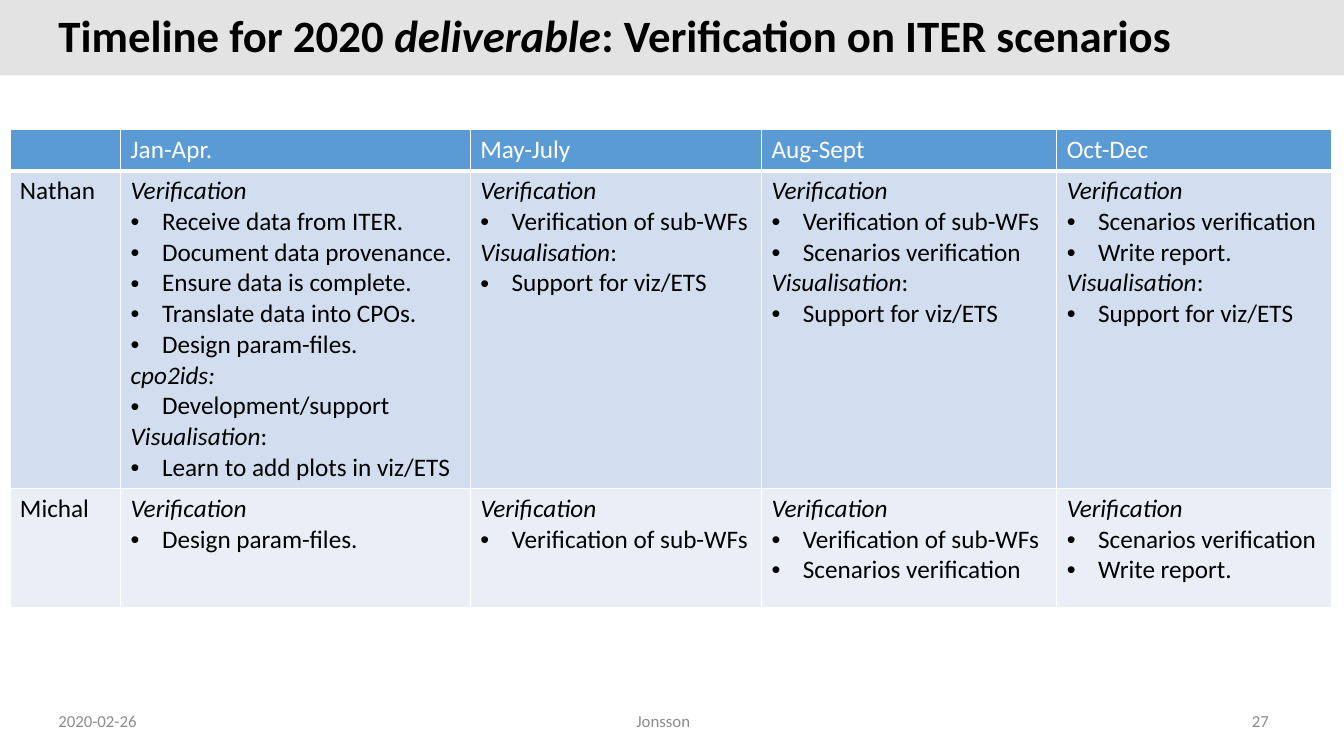
import pptx
import pptx.util
import pptx.dml.color
import pptx.enum.shapes
import pptx.enum.text
import pptx.oxml
from lxml import etree

Cm = pptx.util.Cm
Pt = pptx.util.Pt
RGBColor = pptx.dml.color.RGBColor
ALIGN = pptx.enum.text.PP_ALIGN
MIDDLE = pptx.enum.text.MSO_ANCHOR.MIDDLE

BLACK = RGBColor(0x00, 0x00, 0x00)
WHITE = RGBColor(0xFF, 0xFF, 0xFF)
GREY = RGBColor(0x8C, 0x8C, 0x8C)
BAND = RGBColor(0xE3, 0xE3, 0xE3)
HEADER = RGBColor(0x5B, 0x9B, 0xD5)
ROW_FILLS = [RGBColor(0xD2, 0xDE, 0xEF), RGBColor(0xEA, 0xEF, 0xF7)]
A = "http://schemas.openxmlformats.org/drawingml/2006/main"

SUB_WFS = "Verification of sub-WFs"
SCENARIOS = "Scenarios verification"
PARAM_FILES = "Design param-files."
REPORT = "Write report."
VIZ = ("Visualisation", ":", ["Support for viz/ETS"])


def verification(*tasks):
    """Return a verification section with its tasks."""
    return ("Verification", "", tasks)


PERIODS = ["Jan-Apr.", "May-July", "Aug-Sept", "Oct-Dec"]
PLAN = {
    "Nathan": [
        [verification("Receive data from ITER.", "Document data provenance.",
                      "Ensure data is complete.", "Translate data into CPOs.",
                      PARAM_FILES),
         ("cpo2ids:", "", ["Development/support"]),
         ("Visualisation", ":", ["Learn to add plots in viz/ETS"])],
        [verification(SUB_WFS), VIZ],
        [verification(SUB_WFS, SCENARIOS), VIZ],
        [verification(SCENARIOS, REPORT), VIZ],
    ],
    "Michal": [
        [verification(PARAM_FILES)],
        [verification(SUB_WFS)],
        [verification(SUB_WFS, SCENARIOS)],
        [verification(SCENARIOS, REPORT)],
    ],
}


class SlideBuilder:
    """Holds the text style and the current slide."""

    font = "Calibri"
    body_size = 18

    def __init__(self, prs):
        """Add a title-only slide."""
        self.slide = prs.slides.add_slide(prs.slide_layouts[5])

    def run(self, p, text, size, color, bold=False, italic=False):
        """Add one formatted run to a paragraph."""
        r = p.add_run()
        r.text = text
        r.font.name = self.font
        r.font.size = Pt(size)
        r.font.bold = bold
        r.font.italic = italic
        r.font.color.rgb = color

    def band(self, width, height, color):
        """Add a plain band along the top, behind everything else."""
        sp = self.slide.shapes.add_shape(
            pptx.enum.shapes.MSO_SHAPE.RECTANGLE, 0, 0, width, height)
        sp.shadow.inherit = False
        sp.fill.solid()
        sp.fill.fore_color.rgb = color
        sp.line.fill.background()
        self.slide.shapes._spTree.insert(2, sp._element)

    def title(self, runs, left, top, width, height):
        """Place the title and fill it with (text, italic) runs."""
        sp = self.slide.shapes.title
        sp.left, sp.top, sp.width, sp.height = left, top, width, height
        tf = sp.text_frame
        tf.auto_size = pptx.enum.text.MSO_AUTO_SIZE.NONE
        tf.vertical_anchor = MIDDLE
        p = tf.paragraphs[0]
        p.alignment = ALIGN.LEFT
        p.line_spacing = 0.9
        for text, italic in runs:
            self.run(p, text, 32, BLACK, bold=True, italic=italic)

    def footer(self, text, left, width, align):
        """Add one footer text."""
        sp = self.slide.shapes.add_textbox(left, Cm(17.65), width, Cm(1.02))
        tf = sp.text_frame
        tf.word_wrap = True
        tf.vertical_anchor = MIDDLE
        p = tf.paragraphs[0]
        p.alignment = align
        self.run(p, text, 12, GREY)

    def cell_style(self, cell, fill, bottom=1):
        """Give a cell white borders and a solid fill."""
        tcPr = cell._tc.get_or_add_tcPr()
        for side, width in (("L", 1), ("R", 1), ("T", 1), ("B", bottom)):
            tcPr.append(pptx.oxml.parse_xml(
                f'<a:ln{side} xmlns:a="{A}" w="{Pt(width)}"><a:solidFill>'
                f'<a:srgbClr val="{WHITE}"/></a:solidFill></a:ln{side}>'))
        cell.fill.solid()
        cell.fill.fore_color.rgb = fill

    def bullet(self, p):
        """Turn a paragraph into a bulleted one."""
        pPr = p._p.get_or_add_pPr()
        pPr.set("marL", str(Cm(0.79)))
        pPr.set("indent", str(-Cm(0.79)))
        font = etree.SubElement(pPr, f"{{{A}}}buFont")
        font.set("typeface", "Arial")
        etree.SubElement(pPr, f"{{{A}}}buChar").set("char", "•")

    def sections(self, cell, sections):
        """Fill a cell with italic headings and bulleted tasks."""
        tf = cell.text_frame
        for i, (heading, suffix, tasks) in enumerate(sections):
            p = tf.add_paragraph() if i else tf.paragraphs[0]
            self.run(p, heading, self.body_size, BLACK, italic=True)
            if suffix:
                self.run(p, suffix, self.body_size, BLACK)
            for task in tasks:
                p = tf.add_paragraph()
                self.bullet(p)
                self.run(p, task, self.body_size, BLACK)

    def timeline(self, left, top, col_widths, row_heights):
        """Add the table of people against periods."""
        table = self.slide.shapes.add_table(
            len(row_heights), len(col_widths), left, top,
            sum(col_widths), sum(row_heights)).table
        table.horz_banding = False
        for column, width in zip(table.columns, col_widths):
            column.width = width
        for row, height in zip(table.rows, row_heights):
            row.height = height
        for col, period in enumerate([""] + PERIODS):
            cell = table.cell(0, col)
            self.cell_style(cell, HEADER, bottom=3)
            if period:
                self.run(cell.text_frame.paragraphs[0], period,
                         self.body_size, WHITE)
        for row, (person, periods) in enumerate(PLAN.items(), 1):
            for cell in table.rows[row].cells:
                self.cell_style(cell, ROW_FILLS[row - 1])
            self.run(table.cell(row, 0).text_frame.paragraphs[0], person,
                     self.body_size, BLACK)
            for col, sections in enumerate(periods, 1):
                self.sections(table.cell(row, col), sections)


def main():
    """Build and save the timeline slide."""
    prs = pptx.Presentation()
    prs.slide_width, prs.slide_height = Cm(33.87), Cm(19.05)
    s = SlideBuilder(prs)
    s.band(prs.slide_width, Cm(1.9), BAND)
    s.title([("Timeline for 2020 ", False), ("deliverable", True),
             (": Verification on ITER scenarios", False)],
            Cm(1.22), Cm(0.33), Cm(29.31), Cm(1.24))
    s.timeline(Cm(0.25), Cm(3.27),
               [Cm(w) for w in (2.79, 8.81, 7.34, 7.44, 6.93)],
               [Cm(h) for h in (0.97, 7.52, 3)])
    s.footer("2020-02-26", Cm(1.22), Cm(7.62), ALIGN.LEFT)
    s.footer("Jonsson", Cm(11), Cm(11.43), ALIGN.CENTER)
    s.footer("27", Cm(24.61), Cm(7.62), ALIGN.RIGHT)
    prs.save("out.pptx")


if __name__ == "__main__":
    main()
